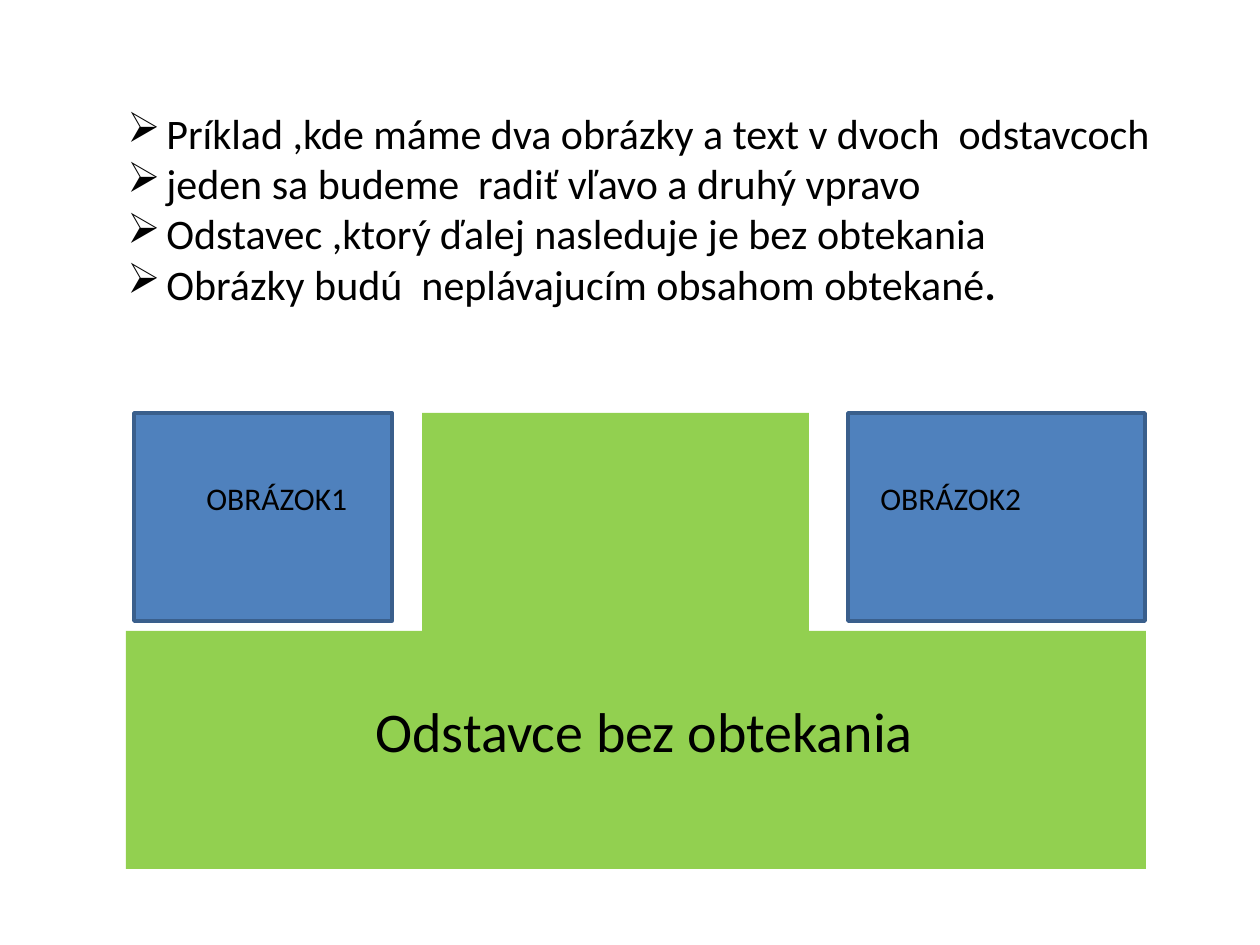
import pptx
import pptx.dml.color
import pptx.enum.shapes
import pptx.enum.text
import pptx.oxml.ns
import pptx.util
from lxml import etree

PX_PER_INCH = 126
FONT = "Calibri"
BLACK = pptx.dml.color.RGBColor(0x00, 0x00, 0x00)
BLUE = pptx.dml.color.RGBColor(0x4F, 0x81, 0xBD)
DARK_BLUE = pptx.dml.color.RGBColor(0x3A, 0x5F, 0x8C)
GREEN = pptx.dml.color.RGBColor(0x92, 0xD0, 0x50)

POINTS = [
    [("Príklad ,kde máme dva obrázky a text v dvoch  odstavcoch", False)],
    [("jeden sa budeme  radiť vľavo a druhý vpravo", False)],
    [("Odstavec ,ktorý ďalej nasleduje je bez obtekania", False)],
    [("Obrázky budú  neplávajucím obsahom obtekané", False), (".", True)],
]


def px(length):
    return pptx.util.Emu(round(length * 914400 / PX_PER_INCH))


def set_bullet(paragraph, character, indent):
    properties = paragraph._p.get_or_add_pPr()
    properties.set("marL", str(px(indent)))
    properties.set("indent", str(-px(indent)))
    bullet = etree.SubElement(properties, pptx.oxml.ns.qn("a:buChar"))
    bullet.set("char", character)


def add_text(slide, paragraphs, box, size, align=None, bullet=None):
    """Add a text box; each paragraph is a list of (text, bold) runs."""
    shape = slide.shapes.add_textbox(*map(px, box))
    frame = shape.text_frame
    frame.word_wrap = True
    frame.auto_size = pptx.enum.text.MSO_AUTO_SIZE.SHAPE_TO_FIT_TEXT
    for index, runs in enumerate(paragraphs):
        paragraph = frame.add_paragraph() if index else frame.paragraphs[0]
        if bullet:
            set_bullet(paragraph, bullet, indent=39)
        if align is not None:
            paragraph.alignment = align
        for text, bold in runs:
            run = paragraph.add_run()
            run.text = text
            run.font.name = FONT
            run.font.size = pptx.util.Pt(size)
            run.font.color.rgb = BLACK
            if bold:
                run.font.bold = True


def add_rectangle(shapes, box, fill, line=None):
    shape = shapes.add_shape(
        pptx.enum.shapes.MSO_SHAPE.RECTANGLE, *map(px, box))
    shape.shadow.inherit = False
    shape.fill.solid()
    shape.fill.fore_color.rgb = fill
    if line is None:
        shape.line.fill.background()
    else:
        shape.line.color.rgb = line
        shape.line.width = pptx.util.Pt(2)


def main():
    presentation = pptx.Presentation()
    presentation.slide_width = px(1260)
    presentation.slide_height = px(945)
    slide = presentation.slides.add_slide(presentation.slide_layouts[6])

    add_text(slide, POINTS, (115, 101, 1101, 217), size=24, bullet="➢")

    for left, width in ((134, 258), (848, 297)):
        add_rectangle(slide.shapes, (left, 413, width, 208), BLUE, DARK_BLUE)
    for label, left in (("OBRÁZOK1", 194), ("OBRÁZOK2", 868)):
        add_text(slide, [[(label, False)]], (left, 473, 258, 50), size=18)

    unwrapped_area = slide.shapes.add_group_shape()
    for box in ((422, 413, 387, 238), (126, 631, 1020, 238)):
        add_rectangle(unwrapped_area.shapes, box, GREEN)
    add_text(slide, [[("Odstavce bez obtekania", False)]],
             (322, 690, 645, 81), size=32,
             align=pptx.enum.text.PP_ALIGN.CENTER)

    presentation.save("out.pptx")


if __name__ == "__main__":
    main()
